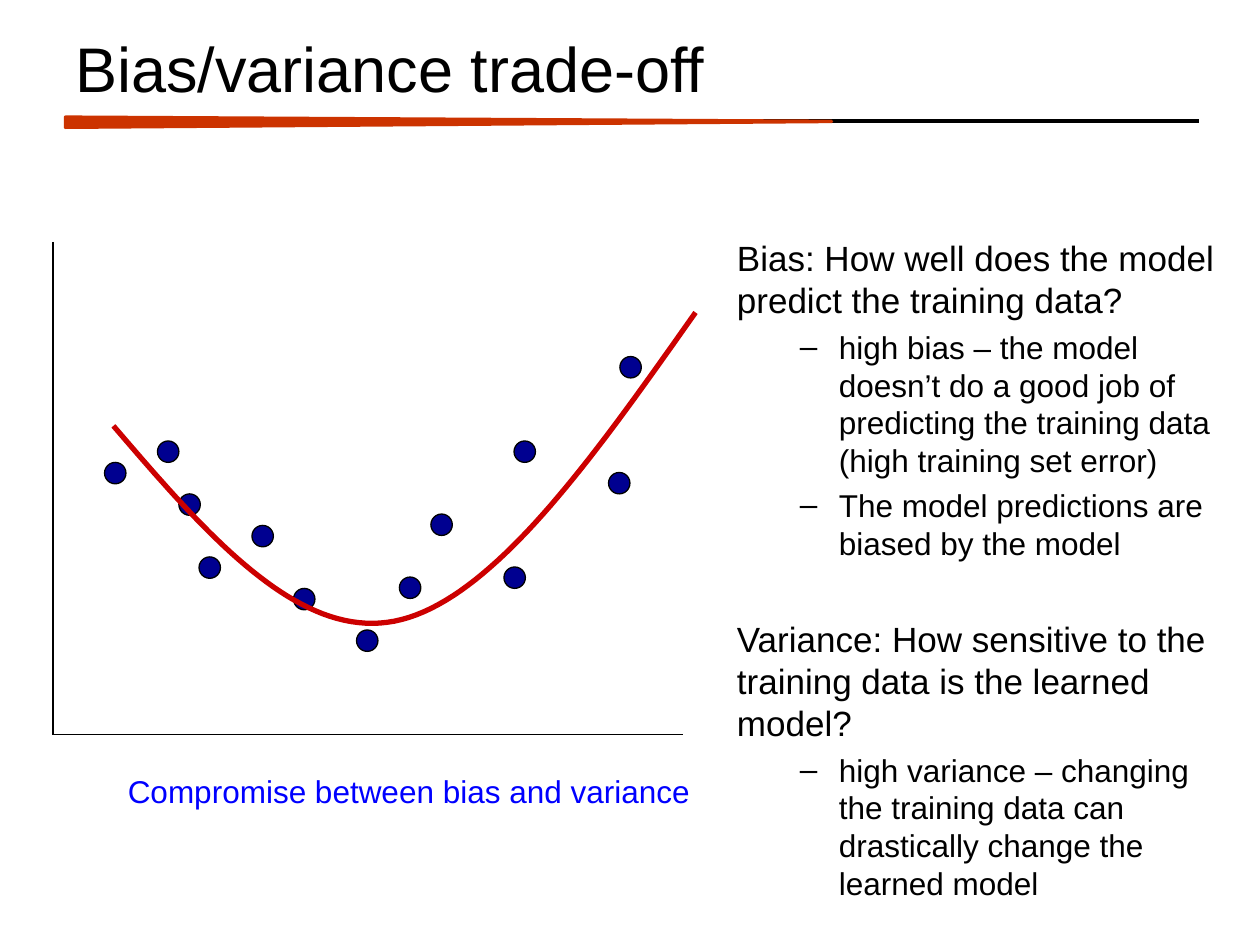
from dataclasses import dataclass

from lxml import etree
from pptx import Presentation
from pptx import util as u
from pptx.dml.color import RGBColor
from pptx.enum import shapes, text
from pptx.oxml.ns import qn


@dataclass(frozen=True)
class Theme:
    font: str = "Arial"
    ink: str = "000000"
    accent: str = "CC3300"
    dot: str = "000090"
    curve: str = "CC0000"
    caption: str = "0000FF"
    title_size: int = 36
    body_size: int = 20
    detail_size: int = 18
    thin: float = 0.75
    rule: float = 2
    thick: float = 3


class SlideBuilder:
    def __init__(self, page, theme):
        self.page = page
        self.theme = theme

    def stroke(self, shape, color, width):
        shape.line.color.rgb = RGBColor.from_string(color)
        shape.line.width = u.Pt(width)

    def line(self, start, end, width):
        points = [u.Inches(value) for value in (*start, *end)]
        line = self.page.shapes.add_connector(shapes.MSO_CONNECTOR.STRAIGHT, *points)
        self.stroke(line, self.theme.ink, width)
        etree.SubElement(line.element.spPr, qn("a:effectLst"))

    def shape(self, kind, frame, fill, outline, width):
        shape = self.page.shapes.add_shape(kind, *map(u.Inches, frame))
        shape.shadow.inherit = False
        shape.fill.solid()
        shape.fill.fore_color.rgb = RGBColor.from_string(fill)
        self.stroke(shape, outline, width)
        return shape

    def bezier(self, segments, color, width, steps=40):
        """Draw joined cubic segments, each given by four control points."""
        points = [segments[0][0]]
        for controls in segments:
            for step in range(1, steps + 1):
                t = step / steps
                weights = ((1 - t) ** 3, 3 * t * (1 - t) ** 2, 3 * t * t * (1 - t), t ** 3)
                points.append([sum(w * c for w, c in zip(weights, axis))
                               for axis in zip(*controls)])
        points = [tuple(map(u.Inches, point)) for point in points]
        builder = self.page.shapes.build_freeform(*points[0])
        builder.add_line_segments(points[1:], close=False)
        curve = builder.convert_to_shape()
        curve.shadow.inherit = False
        curve.fill.background()
        self.stroke(curve, color, width)

    def text_box(self, frame, anchor=text.MSO_ANCHOR.TOP):
        box = self.page.shapes.add_textbox(*map(u.Inches, frame))
        box.text_frame.word_wrap = True
        box.text_frame.vertical_anchor = anchor
        return box.text_frame

    def set_words(self, para, words, size, color, before=0):
        para.text = words
        para.space_before = u.Pt(before)
        font = para.runs[0].font
        font.name = self.theme.font
        font.size = u.Pt(size)
        font.color.rgb = RGBColor.from_string(color)

    def dash(self, para, margin, hang):
        props = para._p.get_or_add_pPr()
        props.set("marL", str(u.Inches(margin)))
        props.set("indent", str(u.Inches(-hang)))
        etree.SubElement(props, qn("a:buFont"), typeface=self.theme.font)
        etree.SubElement(props, qn("a:buChar"), char="–")


DOT_SIZE = 0.17
DOTS = [
    (0.83, 3.67), (1.25, 3.5), (1.42, 3.92), (1.58, 4.42), (2, 4.17), (2.33, 4.67),
    (2.83, 5), (3.17, 4.58), (3.42, 4.08), (4, 4.5), (4.08, 3.5), (4.83, 3.75),
    (4.92, 2.83),
]
FIT = [
    [(0.9, 3.38), (1.63, 4.23), (2.36, 5.08), (3.13, 4.93)],
    [(3.13, 4.93), (3.9, 4.78), (4.71, 3.63), (5.52, 2.48)],
]
# Each topic: question, space before it in points, details.
TOPICS = [
    ("Bias: How well does the model predict the training data?", 4, [
        "high bias – the model doesn’t do a good job of predicting the training data "
        "(high training set error)",
        "The model predictions are biased by the model",
    ]),
    ("Variance: How sensitive to the training data is the learned model?", 32, [
        "high variance – changing the training data can drastically change the learned model",
    ]),
]


def add_header(slide):
    theme = slide.theme
    slide.line((0.52, 0.96), (9.52, 0.96), theme.rule)
    wedge = slide.shape(shapes.MSO_SHAPE.ISOSCELES_TRIANGLE, (3.52, -2.07, 0.08, 6.08),
                        theme.accent, theme.accent, theme.rule)
    wedge.adjustments[0] = 0.42
    wedge.rotation = 90
    title = slide.text_box((0.5, 0.17, 9, 0.72), text.MSO_ANCHOR.MIDDLE)
    slide.set_words(title.paragraphs[0], "Bias/variance trade-off", theme.title_size, theme.ink)


def add_plot(slide):
    theme = slide.theme
    origin = (0.42, 5.83)
    slide.line((0.42, 1.92), origin, theme.thin)
    slide.line((5.42, 5.83), origin, theme.thin)
    for left, top in DOTS:
        slide.shape(shapes.MSO_SHAPE.OVAL, (left, top, DOT_SIZE, DOT_SIZE),
                    theme.dot, theme.ink, theme.thin)
    caption = slide.text_box((0.58, 6.08, 5.33, 0.91)).paragraphs[0]
    slide.set_words(caption, "Compromise between bias and variance",
                    theme.detail_size, theme.caption, before=4)
    caption.alignment = text.PP_ALIGN.CENTER
    slide.bezier(FIT, theme.curve, theme.thick)


def add_topics(slide):
    theme = slide.theme
    frame = slide.text_box((5.75, 1.83, 4.08, 5.33))
    para = frame.paragraphs[0]
    for question, before, details in TOPICS:
        if para.runs:
            para = frame.add_paragraph()
        slide.set_words(para, question, theme.body_size, theme.ink, before)
        for detail in details:
            para = frame.add_paragraph()
            para.level = 1
            slide.set_words(para, detail, theme.detail_size, theme.ink, before=4)
            slide.dash(para, 0.81, 0.31)


def main():
    deck = Presentation()
    deck.slide_width, deck.slide_height = u.Inches(10), u.Inches(7.5)
    slide = SlideBuilder(deck.slides.add_slide(deck.slide_layouts[6]), Theme())
    add_header(slide)
    add_plot(slide)
    add_topics(slide)
    deck.save("out.pptx")


if __name__ == "__main__":
    main()
